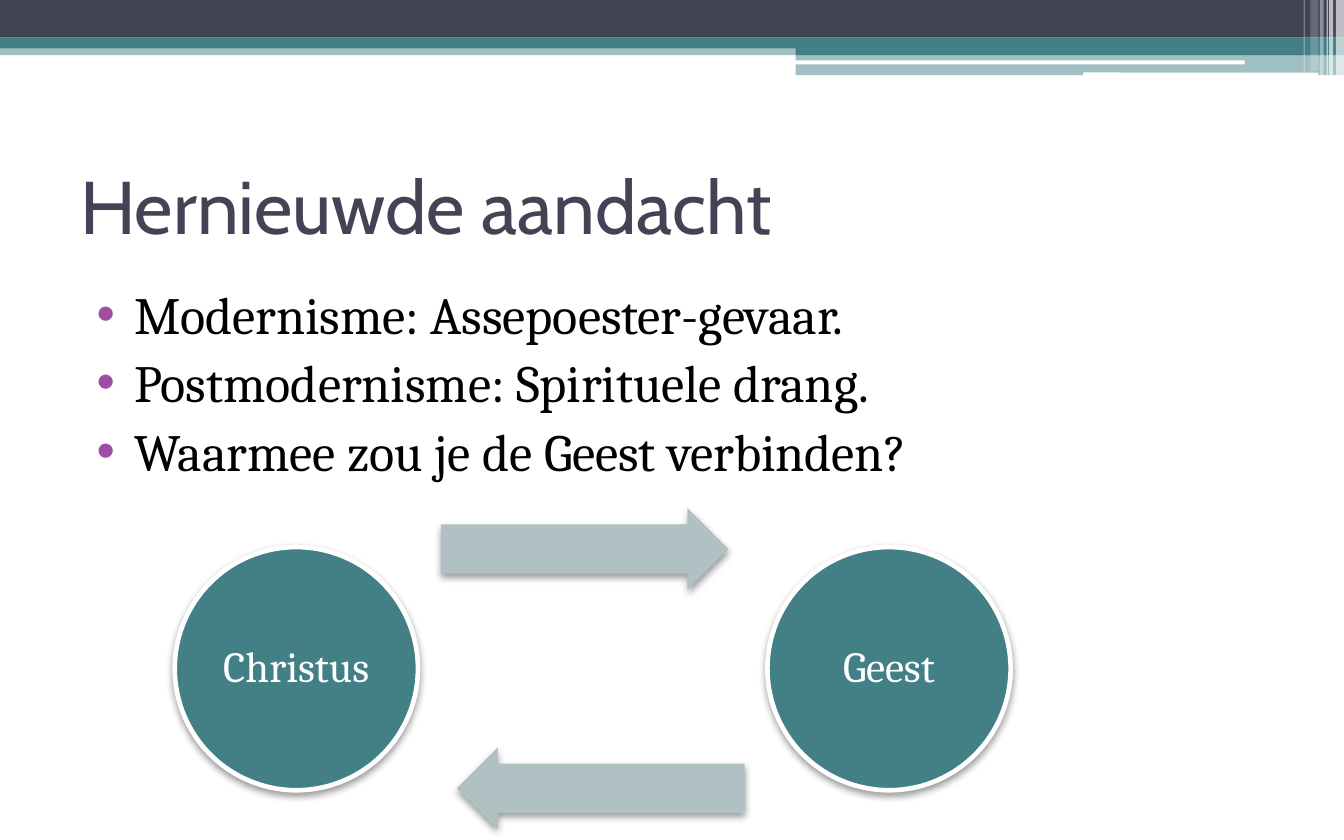
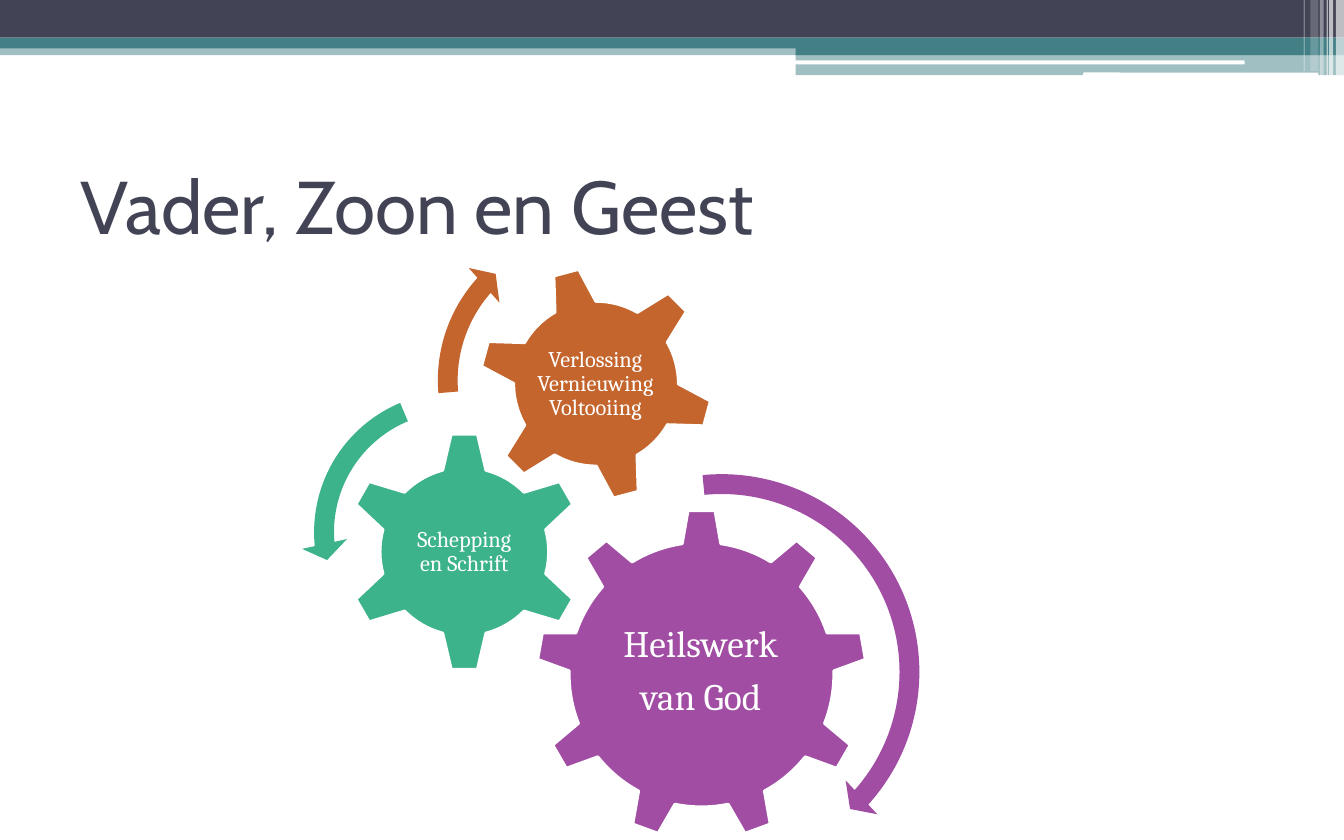
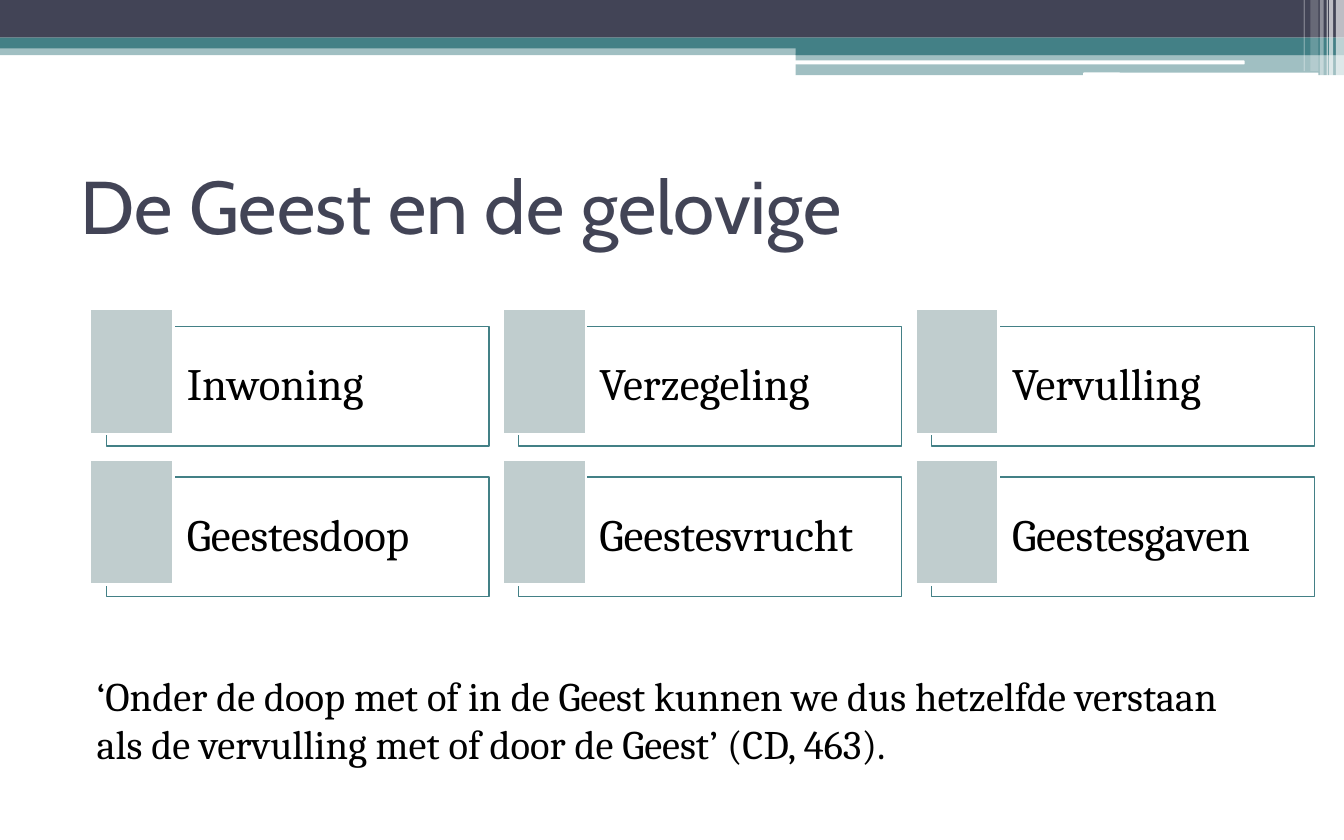
from lxml.etree import SubElement
from pptx import Presentation
from pptx.dml.color import RGBColor
from pptx.enum.shapes import MSO_SHAPE
from pptx.enum.text import MSO_ANCHOR, PP_ALIGN
from pptx.oxml.ns import qn
from pptx.util import Inches, Pt

SLATE = RGBColor(0x42, 0x44, 0x56)
TEAL = RGBColor(0x43, 0x80, 0x86)
PURPLE = RGBColor(0xA0, 0x4D, 0xA3)
GREEN = RGBColor(0x3D, 0xB3, 0x8C)
ORANGE = RGBColor(0xC4, 0x65, 0x2D)
ARROW_GREY = RGBColor(0xB0, 0xC0, 0xC3)
TILE_GREY = RGBColor(0xC0, 0xCD, 0xCE)
WHITE = RGBColor(0xFF, 0xFF, 0xFF)
BLACK = RGBColor(0, 0, 0)

TITLE_FONT, BODY_FONT = "Cabin", "Cambria"
SLIDE_WIDTH, SLIDE_HEIGHT = 10, 6.25
TITLE_BOX = (0.5, 1.04, 9, 0.97)

# left, top, width, height, colour, opacity in percent
BANDS = [
    (0, 0.33, 10, 0.08, TEAL, 50),
    (0, 0, 10, 0.28, SLATE, 100),
    (0, 0.28, 10, 0.08, TEAL, 100),
    (5.92, 0.33, 4.08, 0.08, TEAL, 100),
    (5.92, 0.4, 4.08, 0.16, TEAL, 50),
]
HIGHLIGHTS = [(5.91, 0.45, 3.35, 0.03), (8.06, 0.54, 1.75, 0.03)]
# left, width, height, opacity in percent
STRIPES = [
    (9.94, 0.06, 0.57, 65),
    (9.89, 0.03, 0.57, 65),
    (9.87, 0.01, 0.57, 60),
    (9.82, 0.03, 0.57, 40),
    (9.75, 0.06, 0.53, 20),
    (9.7, 0.01, 0.53, 30),
]


def add_figure(slide, preset, box, color, opacity=100, line=None, adjust=(), rotation=0):
    """Add a flat preset shape; line is a (colour, points) pair."""
    figure = slide.shapes.add_shape(preset, *map(Inches, box))
    figure.shadow.inherit = False
    figure.rotation = rotation
    for index, value in enumerate(adjust):
        figure.adjustments[index] = value
    figure.fill.solid()
    figure.fill.fore_color.rgb = color
    if opacity < 100:
        rgb = figure.element.spPr.find(qn("a:solidFill"))[0]
        SubElement(rgb, qn("a:alpha"), val=str(opacity * 1000))
    if line:
        figure.line.color.rgb = line[0]
        figure.line.width = Pt(line[1])
    else:
        figure.line.fill.background()
    return figure


def add_soft_shadow(figure):
    effects = figure.element.spPr.find(qn("a:effectLst"))
    shadow = SubElement(effects, qn("a:outerShdw"), blurRad=str(Pt(4.1)),
                        dist=str(Pt(2)), dir="5400000", rotWithShape="0")
    rgb = SubElement(shadow, qn("a:srgbClr"), val=str(BLACK))
    SubElement(rgb, qn("a:alpha"), val="40000")


def write(holder, lines, size, color, font=BODY_FONT, align=PP_ALIGN.LEFT,
          anchor=MSO_ANCHOR.MIDDLE, insets=(0.1, 0.05, 0.1, 0.05)):
    frame = holder.text_frame
    frame.text = "\n".join(lines)
    frame.word_wrap = True
    frame.vertical_anchor = anchor
    (frame.margin_left, frame.margin_top,
     frame.margin_right, frame.margin_bottom) = map(Inches, insets)
    for paragraph in frame.paragraphs:
        paragraph.alignment = align
        for run in paragraph.runs:
            run.font.name = font
            run.font.size = Pt(size)
            run.font.color.rgb = color
    return frame.paragraphs


def write_label(holder, lines, size, color=WHITE, align=PP_ALIGN.CENTER, insets=(0.03,) * 4):
    """Write tightly set diagram text."""
    for paragraph in write(holder, lines, size, color, align=align, insets=insets):
        paragraph.line_spacing = 0.9
        paragraph.space_after = Pt(0.35 * size)


def add_text_box(slide, box):
    return slide.shapes.add_textbox(*map(Inches, box))


def add_bullets(slide, box, lines):
    body = add_text_box(slide, box)
    for paragraph in write(body, lines, 28, BLACK, anchor=MSO_ANCHOR.TOP):
        paragraph.space_before = Pt(3)
        properties = paragraph._p.get_or_add_pPr()
        properties.set("marL", str(Inches(0.4)))
        properties.set("indent", str(Inches(-0.28)))
        bullet_color = SubElement(properties, qn("a:buClr"))
        SubElement(bullet_color, qn("a:srgbClr"), val=str(PURPLE))
        SubElement(properties, qn("a:buFont"), typeface="Arial")
        SubElement(properties, qn("a:buChar"), char="•")


def add_quote(slide, box, quote):
    paragraph = write(add_text_box(slide, box), [quote], 21.7, BLACK, anchor=MSO_ANCHOR.TOP)[0]
    paragraph.space_before = Pt(3)
    paragraph._p.get_or_add_pPr().set("marL", str(Inches(0.12)))


def add_header(slide):
    for *box, color, opacity in BANDS:
        add_figure(slide, MSO_SHAPE.RECTANGLE, box, color, opacity)
    for box in HIGHLIGHTS:
        add_figure(slide, MSO_SHAPE.ROUNDED_RECTANGLE, box, WHITE)
    for left, width, height, opacity in STRIPES:
        add_figure(slide, MSO_SHAPE.RECTANGLE, (left, 0, width, height), WHITE, opacity)


def add_titled_slide(deck, title):
    slide = deck.slides.add_slide(deck.slide_layouts[6])
    add_header(slide)
    write(add_text_box(slide, TITLE_BOX), [title], 40, SLATE, TITLE_FONT)
    return slide


def add_cycle(slide, left, top, labels):
    """Draw two circles with one arrow each way between them."""
    diameter, pitch = 1.81, 4.41
    arrows = [(1.98, -0.29, 0), (2.1, 1.49, 180)]
    for index, (label, (dx, dy, rotation)) in enumerate(zip(labels, arrows)):
        circle = add_figure(slide, MSO_SHAPE.OVAL,
                            (left + index * pitch, top, diameter, diameter),
                            TEAL, line=(WHITE, 2.5))
        add_soft_shadow(circle)
        write_label(circle, [label], 23)
        arrow = add_figure(slide, MSO_SHAPE.RIGHT_ARROW, (left + dx, top + dy, 2.14, 0.61),
                           ARROW_GREY, adjust=(0.6, 0.5), rotation=rotation)
        add_soft_shadow(arrow)


def add_gears(slide, left, top):
    """Draw three meshing gears, then the arrows that show how they turn."""
    # preset, x, y, size, rotation, colour, label box, lines, text size
    gears = [
        (MSO_SHAPE.GEAR_9, 1.75, 2.19, 2.46, 0, PURPLE,
         (2.24, 2.77, 1.47, 1.26), ["Heilswerk", "van God"], 20),
        (MSO_SHAPE.GEAR_6, 0.32, 1.61, 1.79, 0, GREEN,
         (0.77, 2.07, 0.89, 0.88), ["Schepping en Schrift"], 12),
        (MSO_SHAPE.GEAR_6, 1.32, 0.38, 1.75, 345, ORANGE,
         (1.7, 0.77, 0.98, 0.98), ["Verlossing Vernieuwing Voltooiing"], 12),
    ]
    # preset, x, y, size, colour, adjustments
    turns = [
        (MSO_SHAPE.CIRCULAR_ARROW, 1.56, 1.83, 3.14, PURPLE,
         (0.047, 2.99, 25.135, 158.67, 0.055)),
        (MSO_SHAPE.LEFT_CIRCULAR_ARROW, 0, 1.22, 2.28, GREEN,
         (0.065, 4.3, 104.891, 148.378, 0.075)),
        (MSO_SHAPE.CIRCULAR_ARROW, 0.92, 0, 2.46, ORANGE,
         (0.06, 3.941, 133.138, 105.082, 0.07)),
    ]
    for preset, x, y, size, rotation, color, (lx, ly, *label_size), lines, points in gears:
        add_figure(slide, preset, (left + x, top + y, size, size), color,
                   line=(WHITE, 1.5), rotation=rotation)
        label = add_text_box(slide, (left + lx, top + ly, *label_size))
        write_label(label, lines, points, insets=(0.02,) * 4)
    for preset, x, y, size, color, adjust in turns:
        add_figure(slide, preset, (left + x, top + y, size, size), color, adjust=adjust)


def add_card(slide, left, top, label):
    card = add_figure(slide, MSO_SHAPE.RECTANGLE, (left + 0.12, top + 0.13, 2.85, 0.89),
                      WHITE, 40, line=(TEAL, 0.75))
    write_label(card, [label], 24, BLACK, PP_ALIGN.LEFT, (0.6, 0.1, 0.1, 0.1))
    add_figure(slide, MSO_SHAPE.RECTANGLE, (left, top, 0.62, 0.93), TILE_GREY,
               line=(WHITE, 1.5))


def add_card_grid(slide, left, top, labels, columns=3):
    for index, label in enumerate(labels):
        row, column = divmod(index, columns)
        add_card(slide, left + column * 3.07, top + row * 1.12, label)


def main():
    deck = Presentation()
    deck.slide_width, deck.slide_height = Inches(SLIDE_WIDTH), Inches(SLIDE_HEIGHT)

    attention = add_titled_slide(deck, "Hernieuwde aandacht")
    add_bullets(attention, (0.5, 2.05, 9, 3.94), [
        "Modernisme: Assepoester-gevaar.",
        "Postmodernisme: Spirituele drang.",
        "Waarmee zou je de Geest verbinden?",
    ])
    add_cycle(attention, 1.3, 4.07, ["Christus", "Geest"])

    trinity = add_titled_slide(deck, "Vader, Zoon en Geest")
    add_gears(trinity, 2.24, 1.6)

    believer = add_titled_slide(deck, "De Geest en de gelovige")
    add_quote(believer, (0.5, 4.94, 9, 1.06),
              "‘Onder de doop met of in de Geest kunnen we dus hetzelfde verstaan "
              "als de vervulling met of door de Geest’ (CD, 463).")
    add_card_grid(believer, 0.67, 2.3, [
        "Inwoning", "Verzegeling", "Vervulling",
        "Geestesdoop", "Geestesvrucht", "Geestesgaven",
    ])

    deck.save("out.pptx")


if __name__ == "__main__":
    main()
